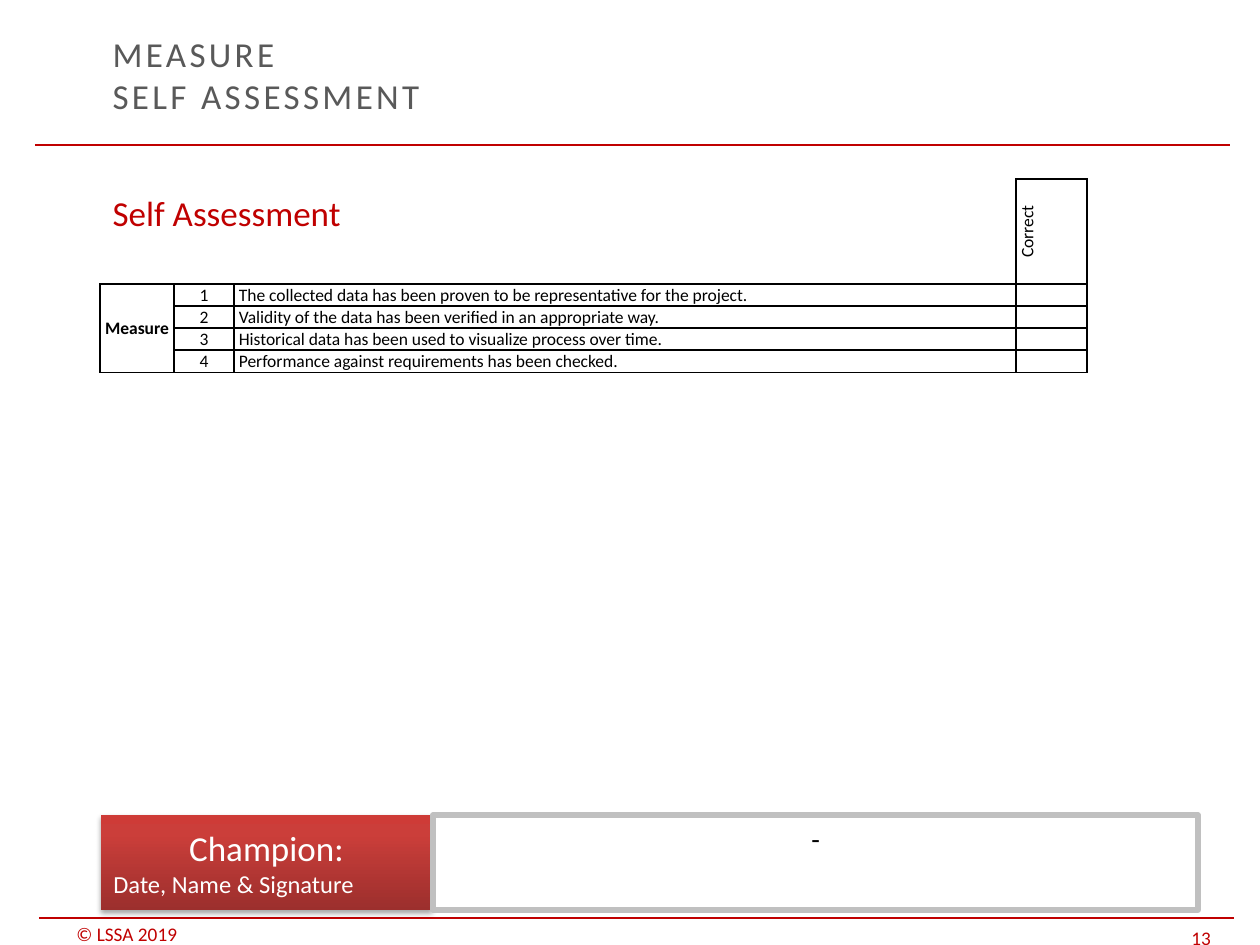
from lxml.etree import SubElement
from pptx import Presentation
from pptx.dml.color import RGBColor as Rgb
from pptx.enum.shapes import MSO_CONNECTOR as Connector, MSO_SHAPE as Shape
from pptx.enum.text import MSO_ANCHOR as Anchor, PP_ALIGN as Align
from pptx.oxml import parse_xml
from pptx.oxml.ns import nsdecls, qn
from pptx.util import Emu, Pt

COLORS = {
    "red": "C00000", "gray": "595959", "black": "000000", "white": "FFFFFF",
    "silver": "C0C0C0", "dark": "9C2F2D", "mid": "CB3E3A", "light": "CE3B37",
}
STATEMENTS = [
    "The collected data has been proven to be representative for the project.",
    "Validity of the data has been verified in an appropriate way.",
    "Historical data has been used to visualize process over time.",
    "Performance against requirements has been checked.",
]
NO_GRID_STYLE = "{2D5ABB26-0587-4C30-8999-92F81FD0307C}"


def px(count):
    return Emu(round(count * 914400 / 126))


def color(name):
    return Rgb.from_string(COLORS[name])


def apply(target, values):
    for name, value in values.items():
        setattr(target, name, value)


def write(para, text, size, tone, bold=False):
    para.alignment = para.alignment or Align.LEFT
    span = para.add_run()
    span.text = text
    apply(span.font, {"name": "Calibri", "size": Pt(size), "bold": bold})
    span.font.color.rgb = color(tone)
    return span


def place(shape, box):
    apply(shape, dict(zip(("left", "top", "width", "height"), map(px, box))))


def add_title(page, box):
    title = page.shapes.title
    place(title, box)
    title.text_frame.vertical_anchor = Anchor.MIDDLE
    para = title.text_frame.paragraphs[0]
    para.alignment = Align.LEFT
    for index, text in enumerate(("MEASURE", "SELF ASSESSMENT")):
        if index:
            para.add_line_break()
        span = write(para, text, 20, "gray")
        span.font._element.set("spc", "190")


def add_body(page, box):
    body = page.placeholders[1]
    place(body, box)
    para = body.text_frame.paragraphs[0]
    props = para._p.get_or_add_pPr()
    props.set("marL", str(px(48)))
    props.set("indent", str(px(-48)))
    SubElement(props, qn("a:buNone"))
    para.space_before = Pt(0)
    write(para, "Self Assessment", 20, "red")


def add_rule(page, left, top, width):
    rule = page.shapes.add_connector(
        Connector.STRAIGHT, px(left), px(top), px(left + width), px(top))
    rule.line.color.rgb = color("red")
    rule.line.width = Pt(0.75)
    SubElement(rule._element.spPr, qn("a:effectLst"))


def add_footer_text(page, box, text):
    frame = page.shapes.add_textbox(*map(px, box)).text_frame
    apply(frame, {"word_wrap": False, "margin_top": 0, "margin_bottom": 0,
                  "vertical_anchor": Anchor.BOTTOM})
    write(frame.paragraphs[0], text, 11, "red")


def set_borders(cell, sides):
    props = cell._tc.get_or_add_tcPr()
    for index, side in enumerate(side for side in "LRTB" if side in sides):
        props.insert(index, parse_xml(
            f'<a:ln{side} {nsdecls("a")} w="12700"><a:solidFill>'
            f'<a:srgbClr val="{COLORS["black"]}"/></a:solidFill></a:ln{side}>'))


def fill_cell(cell, text="", align=Align.CENTER, anchor=Anchor.MIDDLE,
              bold=False, left=1, sides="LRTB"):
    cell.fill.background()
    apply(cell, {"margin_left": px(left), "margin_right": px(1),
                 "margin_top": px(1), "margin_bottom": 0,
                 "vertical_anchor": anchor})
    para = cell.text_frame.paragraphs[0]
    para.alignment = align
    if text:
        write(para, text, 10, "black", bold)
    else:
        SubElement(para._p, qn("a:endParaRPr")).set("sz", "1000")
    set_borders(cell, sides)


def add_assessment(page, box):
    frame = page.shapes.add_table(len(STATEMENTS) + 1, 4, *map(px, box))
    table = frame.table
    apply(table, {"first_row": False, "horz_banding": False})
    table._tbl.tblPr.find(qn("a:tableStyleId")).text = NO_GRID_STYLE
    for column, width in zip(table.columns, (74, 60, 782, 71)):
        column.width = px(width)
    for index, row in enumerate(table.rows):
        row.height = px(22 if index else 105)

    for index, sides in enumerate(("B", "B", "RB")):
        fill_cell(table.cell(0, index), sides=sides)
    correct = table.cell(0, 3)
    fill_cell(correct, "Correct")
    correct._tc.tcPr.set("vert", "vert270")

    for number, statement in enumerate(STATEMENTS, 1):
        fill_cell(table.cell(number, 0), "Measure" if number == 1 else "", bold=True)
        fill_cell(table.cell(number, 1), str(number))
        fill_cell(table.cell(number, 2), statement, Align.LEFT, Anchor.BOTTOM, left=5)
        fill_cell(table.cell(number, 3))
    table.cell(1, 0).merge(table.cell(len(STATEMENTS), 0))


def add_panel(page, box, anchor, lines, tone):
    panel = page.shapes.add_shape(Shape.RECTANGLE, *map(px, box))
    panel.shadow.inherit = False
    frame = panel.text_frame
    apply(frame, {"word_wrap": True, "vertical_anchor": anchor})
    for index, (text, size) in enumerate(lines):
        para = frame.add_paragraph() if index else frame.paragraphs[0]
        write(para, text, size, tone)
    return panel


def add_gradient(panel):
    panel.fill.gradient()
    panel.fill.gradient_angle = 90
    stops = panel._element.spPr.find(qn("a:gradFill")).find(qn("a:gsLst"))
    stops.clear()
    for position, tone in ((0, "dark"), (80, "mid"), (100, "light")):
        stop = SubElement(stops, qn("a:gs"), pos=str(position * 1000))
        SubElement(stop, qn("a:srgbClr"), val=COLORS[tone])


def add_shadow(panel):
    effects = panel._element.spPr.find(qn("a:effectLst"))
    shadow = SubElement(effects, qn("a:outerShdw"), blurRad=str(Pt(3.1)),
                        dist=str(Pt(1.8)), dir="5400000", rotWithShape="0")
    tint = SubElement(shadow, qn("a:srgbClr"), val=COLORS["black"])
    SubElement(tint, qn("a:alpha"), val="35000")


def add_sign_off(page, left, top, width, height):
    label_width = 331
    label = add_panel(page, (left, top, label_width, height), Anchor.MIDDLE,
                      [("Champion:", 20), ("Date, Name & Signature", 14)], "white")
    add_gradient(label)
    label.line.fill.background()
    add_shadow(label)

    entry = add_panel(page, (left + label_width + 1, top, width - label_width - 1, height),
                      Anchor.TOP, [("-", 16)], "black")
    entry.fill.solid()
    entry.fill.fore_color.rgb = color("white")
    entry.line.color.rgb = color("silver")
    entry.line.width = Pt(3)


def main():
    deck = Presentation()
    apply(deck, {"slide_width": px(1260), "slide_height": px(945)})
    page = deck.slides.add_slide(deck.slide_layouts[1])
    add_footer_text(page, (64, 922, 179, 23), "© LSSA 2019")
    add_footer_text(page, (1179, 921, 81, 28), "13")
    add_rule(page, 35, 145, 1195)
    add_rule(page, 39, 918, 1195)
    add_title(page, (100, 33, 893, 83))
    add_body(page, (100, 185, 1091, 694))
    add_assessment(page, (100, 179, 987, 193))
    add_sign_off(page, 101, 815, 1097, 95)
    deck.save("out.pptx")


if __name__ == "__main__":
    main()
